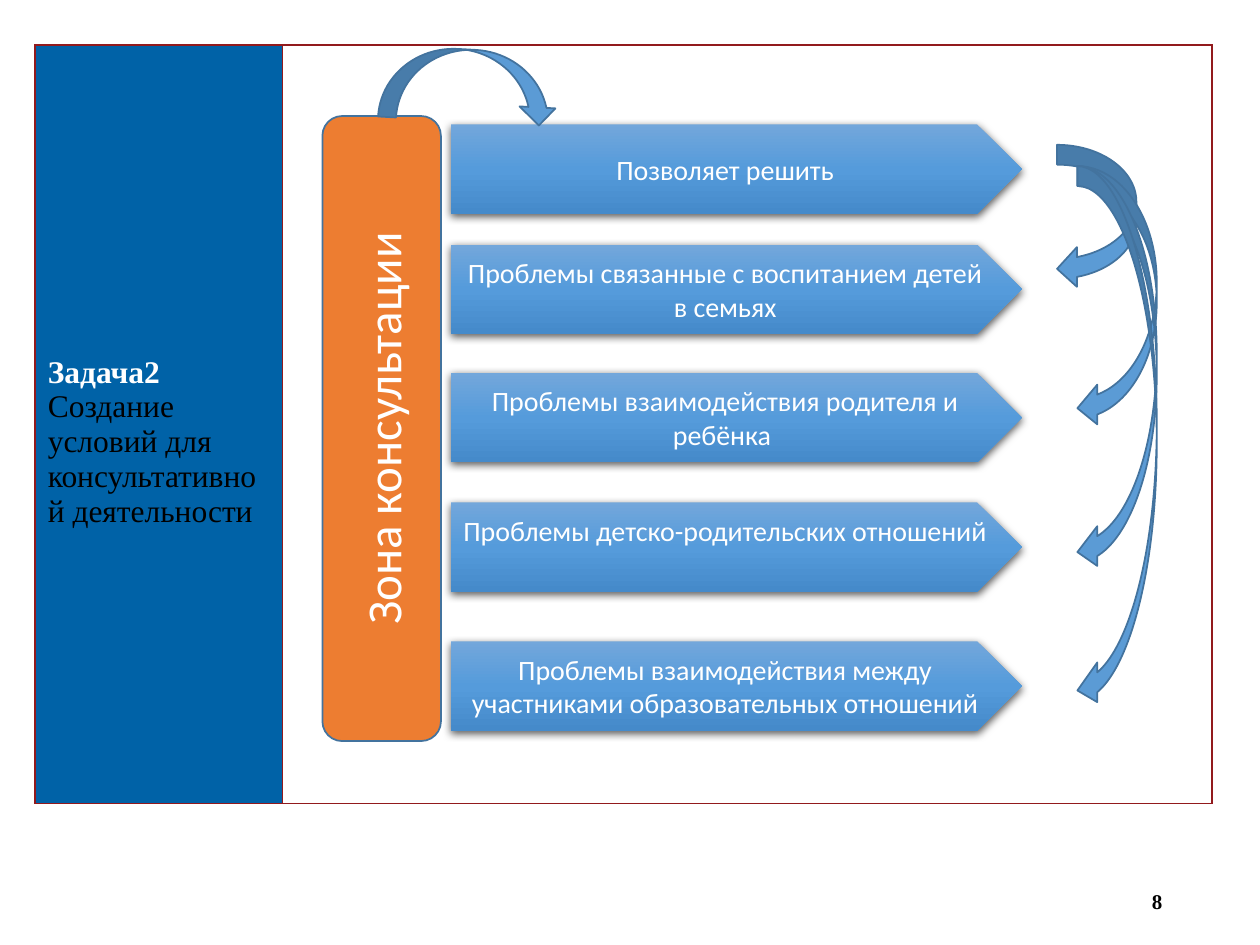
"""Build the slide on the consultation zone and the problems it solves."""
from pptx import Presentation
from pptx.dml.color import RGBColor
from pptx.enum.shapes import MSO_SHAPE
from pptx.enum.text import MSO_ANCHOR, PP_ALIGN
from pptx.oxml import parse_xml
from pptx.oxml.ns import nsdecls
from pptx.util import Cm, Pt

ROUND = MSO_SHAPE.ROUNDED_RECTANGLE
PLATE = MSO_SHAPE.PENTAGON
CURVE = MSO_SHAPE.CURVED_LEFT_ARROW
MIDDLE = MSO_ANCHOR.MIDDLE
LEFT, CENTER, RIGHT = PP_ALIGN.LEFT, PP_ALIGN.CENTER, PP_ALIGN.RIGHT
HUES = {
    "white": "FFFFFF", "black": "000000", "navy": "0062A7", "red": "921A1D",
    "orange": "ED7D31", "edge": "43739E", "blue": "5B9BD5",
    "top": "73A7DB", "mid": "559BDB", "low": "458ACA",
}
SERIF = "Times New Roman"


def write(frame, text, size=16, font="Calibri", hue="white", bold=False, align=CENTER, first=True):
    para = frame.paragraphs[0] if first else frame.add_paragraph()
    para.alignment = align
    run = para.add_run()
    run.text = text
    run.font.size = Pt(size)
    run.font.name = font
    run.font.bold = bold
    run.font.color.rgb = RGBColor.from_string(HUES[hue])


def draw(kind, box, fill):
    shape = shapes.add_shape(kind, *[Cm(n) for n in box])
    shape.shadow.inherit = False
    shape.fill.solid()
    shape.fill.fore_color.rgb = RGBColor.from_string(HUES[fill])
    shape.line.color.rgb = RGBColor.from_string(HUES["edge"])
    shape.line.width = Pt(1)
    return shape


deck = Presentation()
deck.slide_width, deck.slide_height = Cm(25.4), Cm(19.05)
slide = deck.slides.add_slide(deck.slide_layouts[6])
shapes = slide.shapes

page = shapes.add_textbox(Cm(17.96), Cm(17.65), Cm(5.72), Cm(1.02)).text_frame
page.word_wrap = True
page.vertical_anchor = MIDDLE
write(page, "8", size=12, font=SERIF, hue="black", bold=True, align=RIGHT)

table = shapes.add_table(1, 2, Cm(0.71), Cm(0.91), Cm(23.72), Cm(15.29)).table
table.first_row = table.horz_banding = False
table.rows[0].height = Cm(15.29)
for col, (width, hue) in enumerate([(4.98, "navy"), (18.74, "white")]):
    table.columns[col].width = Cm(width)
    cell = table.cell(0, col)
    cell.vertical_anchor = MIDDLE
    props = cell._tc.get_or_add_tcPr()
    for side in ("lnL", "lnR", "lnT", "lnB"):
        props.append(parse_xml(
            f'<a:{side} {nsdecls("a")} w="12700"><a:solidFill>'
            f'<a:srgbClr val="{HUES["red"]}"/></a:solidFill></a:{side}>'))
    cell.fill.solid()
    cell.fill.fore_color.rgb = RGBColor.from_string(HUES[hue])

task = table.cell(0, 0)
task.margin_top = Cm(0.84)
write(task.text_frame, "Задача2", size=18, font=SERIF, bold=True, align=LEFT)
write(task.text_frame, "Создание условий для консультативной деятельности",
      size=18, font=SERIF, hue="black", align=LEFT, first=False)

zone = draw(ROUND, (6.5, 2.34, 2.39, 12.6), "orange").text_frame
zone.word_wrap = True
zone.vertical_anchor = MIDDLE
zone._txBody.bodyPr.set("vert", "vert270")
write(zone, "Зона консультации", size=28)

stops = "".join(
    f'<a:gs pos="{pos}"><a:srgbClr val="{HUES[hue]}"/></a:gs>'
    for pos, hue in [(0, "top"), (50000, "mid"), (100000, "low")])
fade = (f'<a:gradFill {nsdecls("a")} rotWithShape="1"><a:gsLst>{stops}</a:gsLst>'
        '<a:lin ang="5400000" scaled="0"/></a:gradFill>')
shade = (f'<a:effectLst {nsdecls("a")}><a:outerShdw blurRad="57150" dist="19050" '
         'dir="5400000" algn="ctr" rotWithShape="0">'
         f'<a:srgbClr val="{HUES["black"]}"><a:alpha val="63000"/></a:srgbClr>'
         '</a:outerShdw></a:effectLst>')
bars = [
    (2.51, "Позволяет решить", 0.13),
    (4.93, "Проблемы связанные с воспитанием детей в семьях", 0.13),
    (7.52, "Проблемы взаимодействия родителя и ребёнка ", 0.13),
    (10.13, "Проблемы детско-родительских отношений", 0.81),
    (12.93, "Проблемы взаимодействия между участниками образовательных отношений", 0.13),
]
for top, text, base in bars:
    bar = shapes.add_shape(PLATE, Cm(9.09), Cm(top), Cm(11.51), Cm(1.8))
    bar.line.fill.background()
    props = bar._element.spPr
    props.insert(2, parse_xml(fade))
    props.append(parse_xml(shade))
    frame = bar.text_frame
    frame.word_wrap = True
    frame.vertical_anchor = MIDDLE
    frame.margin_bottom = Cm(base)
    write(frame, text)

draw(CURVE, (21.31, 2.92, 1.6, 2.9), "blue")
for height in (5.28, 8.18, 10.97):
    draw(CURVE, (21.72, 3.35, 1.6, height), "blue")
draw(CURVE, (8.74, -0.08, 1.45, 3.61), "blue").rotation = 273.2

deck.save("out.pptx")
